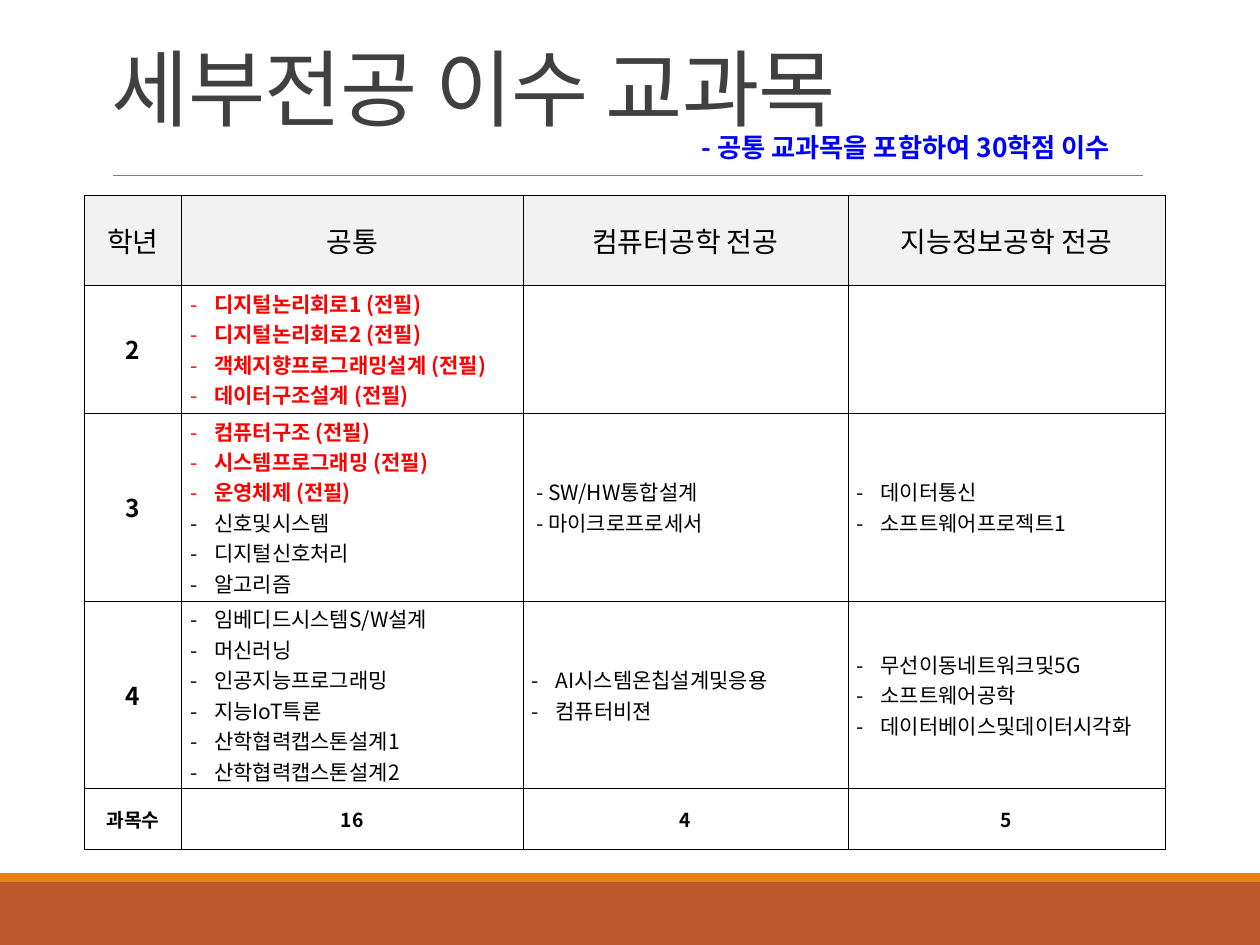
from lxml import etree
from pptx import Presentation, util as u
from pptx.dml.color import RGBColor
from pptx.enum import shapes, text
from pptx.oxml.ns import qn

WIDTH, HEIGHT = 10, 7.5
KOREAN_FONT, TITLE_FONT = "Noto Sans CJK KR", "Calibri"
BLACK = RGBColor(0x00, 0x00, 0x00)
RED = RGBColor(0xFF, 0x00, 0x00)
BLUE = RGBColor(0x00, 0x00, 0xFF)
DARK_GRAY = RGBColor(0x40, 0x40, 0x40)
RULE_GRAY = RGBColor(0x80, 0x80, 0x80)
HEADER_GRAY = RGBColor(0xF2, 0xF2, 0xF2)
RUST = RGBColor(0xBD, 0x58, 0x2C)
ORANGE = RGBColor(0xE4, 0x83, 0x12)

COLUMNS = [0.77, 2.71, 2.58, 2.52]
ROWS = [0.71, 1.02, 1.49, 1.49, 0.48]
HEADERS = ["학년", "공통", "컴퓨터공학 전공", "지능정보공학 전공"]
REQUIRED = "(전필)"
COURSES = {
    "2": [["디지털논리회로1 (전필)", "디지털논리회로2 (전필)",
           "객체지향프로그래밍설계 (전필)", "데이터구조설계 (전필)"], [], []],
    "3": [["컴퓨터구조 (전필)", "시스템프로그래밍 (전필)", "운영체제 (전필)",
           "신호및시스템", "디지털신호처리", "알고리즘"],
          [" - SW/HW통합설계", "\u00a0- 마이크로프로세서"],
          ["데이터통신", "소프트웨어프로젝트1"]],
    "4": [["임베디드시스템S/W설계", "머신러닝", "인공지능프로그래밍",
           "지능IoT특론", "산학협력캡스톤설계1", "산학협력캡스톤설계2"],
          ["AI시스템온칩설계및응용", "컴퓨터비젼"],
          ["무선이동네트워크및5G", "소프트웨어공학", "데이터베이스및데이터시각화"]],
}
TOTALS = ["과목수", "16", "4", "5"]


def add_element(parent, tag, **attributes):
    return etree.SubElement(parent, qn(tag), **attributes)


def write(paragraph, words, size=12, color=BLACK, bold=False, font=KOREAN_FONT,
          align=text.PP_ALIGN.LEFT, bullet=False, spacing=None, line_spacing=None):
    """Fill one paragraph; spacing is between characters, in points."""
    paragraph.alignment = align
    if line_spacing:
        paragraph.line_spacing = line_spacing
    if bullet:
        properties = paragraph._p.get_or_add_pPr()
        indent = u.Inches(0.19)
        properties.set("marL", str(indent))
        properties.set("indent", str(-indent))
        add_element(properties, "a:buFont", typeface=KOREAN_FONT)
        add_element(properties, "a:buChar", char="-")
    run = paragraph.add_run()
    run.text = words
    run.font.size = u.Pt(size)
    run.font.bold = bold
    run.font.name = font
    run.font.color.rgb = color
    add_element(run._r.rPr, "a:ea", typeface=KOREAN_FONT)
    if spacing:
        run._r.rPr.set("spc", str(round(spacing * 100)))


def add_band(slide, top, height, color):
    band = slide.shapes.add_shape(shapes.MSO_SHAPE.RECTANGLE, 0, u.Inches(top),
                                  u.Inches(WIDTH), u.Inches(height))
    band.shadow.inherit = False
    band.fill.solid()
    band.fill.fore_color.rgb = color
    band.line.fill.background()


def add_rule(slide, left, right, top):
    rule = slide.shapes.add_connector(shapes.MSO_CONNECTOR.STRAIGHT, u.Inches(left),
                                      u.Inches(top), u.Inches(right), u.Inches(top))
    rule.line.color.rgb = RULE_GRAY
    rule.line.width = u.Pt(0.5)
    add_element(rule._element.spPr, "a:effectLst")


def add_text(slide, box, words, wrap=True, anchor=text.MSO_ANCHOR.TOP, **style):
    frame = slide.shapes.add_textbox(*map(u.Inches, box)).text_frame
    frame.word_wrap = wrap
    frame.vertical_anchor = anchor
    write(frame.paragraphs[0], words, **style)


def format_cell(cell, fill=None, margins=(0.07, 0.02)):
    properties = cell._tc.get_or_add_tcPr()
    for side in "LRTB":
        border = add_element(properties, f"a:ln{side}", w=str(u.Pt(0.28)))
        solid = add_element(border, "a:solidFill")
        add_element(solid, "a:srgbClr", val=str(BLACK))
    if fill:
        cell.fill.solid()
        cell.fill.fore_color.rgb = fill
    else:
        cell.fill.background()
    cell.vertical_anchor = text.MSO_ANCHOR.MIDDLE
    cell.margin_left = cell.margin_right = u.Inches(margins[0])
    cell.margin_top = cell.margin_bottom = u.Inches(margins[1])


def write_centred(cell, words, **style):
    write(cell.text_frame.paragraphs[0], words, align=text.PP_ALIGN.CENTER, **style)


def write_courses(cell, courses):
    """List courses, with required ones in bold red."""
    frame = cell.text_frame
    for index, course in enumerate(courses):
        paragraph = frame.add_paragraph() if index else frame.paragraphs[0]
        required = course.endswith(REQUIRED)
        has_dash = course.strip().startswith("-")
        write(paragraph, course, color=RED if required else BLACK,
              bold=required, bullet=not has_dash)


def add_course_table(slide, left, top):
    table = slide.shapes.add_table(
        len(ROWS), len(COLUMNS), u.Inches(left), u.Inches(top),
        u.Inches(sum(COLUMNS)), u.Inches(sum(ROWS))).table
    table.first_row = table.horz_banding = False
    for column, width in zip(table.columns, COLUMNS):
        column.width = u.Inches(width)
    for row, height in zip(table.rows, ROWS):
        row.height = u.Inches(height)

    header, *years, total = [list(row.cells) for row in table.rows]
    for cell, words in zip(header, HEADERS):
        format_cell(cell, fill=HEADER_GRAY, margins=(0, 0))
        write_centred(cell, words, size=16)
    for cells, (year, lists) in zip(years, COURSES.items()):
        for cell in cells:
            format_cell(cell)
        write_centred(cells[0], year, size=14, bold=True)
        for cell, courses in zip(cells[1:], lists):
            write_courses(cell, courses)
    for cell, words in zip(total, TOTALS):
        format_cell(cell)
        write_centred(cell, words, size=11, bold=True)


def main():
    presentation = Presentation()
    presentation.slide_width = u.Inches(WIDTH)
    presentation.slide_height = u.Inches(HEIGHT)
    slide = presentation.slides.add_slide(presentation.slide_layouts[6])

    add_band(slide, 7, 0.5, RUST)
    add_band(slide, 6.93, 0.07, ORANGE)
    add_rule(slide, 0.9, 9.07, 1.39)
    add_text(slide, (0.79, 0.15, 8.25, 0.99), "세부전공 이수 교과목",
             anchor=text.MSO_ANCHOR.BOTTOM, size=48, color=DARK_GRAY,
             font=TITLE_FONT, spacing=-0.5, line_spacing=0.85)
    add_course_table(slide, 0.67, 1.55)
    add_text(slide, (5.47, 0.99, 3.87, 0.35), "- 공통 교과목을 포함하여 30학점 이수",
             wrap=False, size=15, color=BLUE, bold=True)
    presentation.save("out.pptx")


if __name__ == "__main__":
    main()
